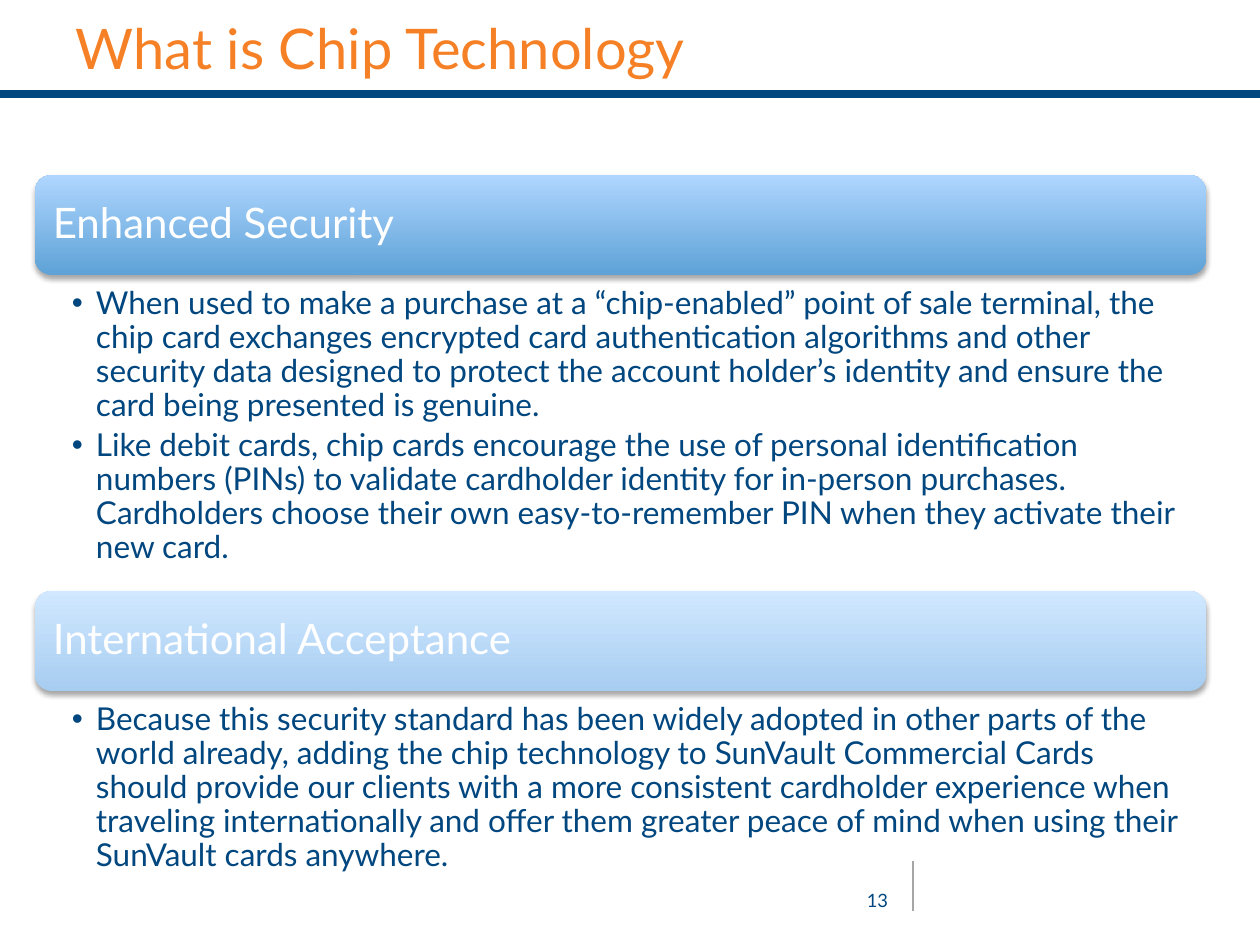
from dataclasses import dataclass

from lxml import etree
from pptx import Presentation
from pptx.dml.color import RGBColor
from pptx.enum.shapes import MSO_CONNECTOR, MSO_SHAPE
from pptx.enum.text import MSO_ANCHOR, PP_ALIGN
from pptx.oxml.ns import qn
from pptx.util import Pt

STRAIGHT = MSO_CONNECTOR.STRAIGHT
ROUNDED = MSO_SHAPE.ROUNDED_RECTANGLE
TOP, MIDDLE = MSO_ANCHOR.TOP, MSO_ANCHOR.MIDDLE
LEFT, RIGHT = PP_ALIGN.LEFT, PP_ALIGN.RIGHT

TITLE = "What is Chip Technology"
PAGE_NUMBER = "13"
SECTIONS = [
    {
        "heading": "Enhanced Security",
        "gradient": ("5EA2D7", "AFD6FF"),
        "body_height": 278,
        "points": [
            "When used to make a purchase at a “chip-enabled” point of sale terminal, "
            "the chip card exchanges encrypted card authentication algorithms and other "
            "security data designed to protect the account holder’s identity and ensure "
            "the card being presented is genuine.",
            "Like debit cards, chip cards encourage the use of personal identification "
            "numbers (PINs) to validate cardholder identity for in-person purchases. "
            "Cardholders choose their own easy-to-remember PIN when they activate their "
            "new card.",
        ],
    },
    {
        "heading": "International Acceptance",
        "gradient": ("A7CDF1", "D1E8FF"),
        "body_height": 171,
        "points": [
            "Because this security standard has been widely adopted in other parts of the "
            "world already, adding the chip technology to SunVault Commercial Cards "
            "should provide our clients with a more consistent cardholder experience when "
            "traveling internationally and offer them greater peace of mind when using "
            "their SunVault cards anywhere.",
        ],
    },
]


@dataclass(frozen=True)
class Theme:
    font: str = "Lato"
    navy: str = "00467F"
    orange: str = "F58025"
    white: str = "FFFFFF"
    grey: str = "A6A6A6"
    shadow: str = "000000"
    title_size: float = 32
    heading_size: float = 24
    body_size: float = 18
    number_size: float = 10.5


THEME = Theme()
SLIDE_W, SLIDE_H = 1260, 945
SECTION_X, SECTION_W, FIRST_SECTION_Y = 35, 1171, 175
BAR_H, BODY_GAP, SECTION_GAP = 100, 8, 30
BULLET_INDENT = 24


def px(length):
    return round(length * 914400 / 126)


def rgb(value):
    return RGBColor.from_string(value)


def write(shape, paragraphs, *, size, color, align=LEFT, anchor=TOP,
          insets=(13, 6, 13, 6), wrap=True, spacing=None, after=0, bullet=None):
    frame = shape.text_frame
    frame.word_wrap = wrap
    frame.vertical_anchor = anchor
    (frame.margin_left, frame.margin_top,
     frame.margin_right, frame.margin_bottom) = map(px, insets)
    for index, text in enumerate(paragraphs):
        paragraph = frame.paragraphs[0] if index == 0 else frame.add_paragraph()
        paragraph.text = text
        paragraph.alignment = align
        paragraph.space_after = Pt(after)
        if spacing:
            paragraph.line_spacing = spacing
        if bullet:
            properties = paragraph._p.get_or_add_pPr()
            properties.set("marL", str(px(BULLET_INDENT)))
            properties.set("indent", str(-px(BULLET_INDENT)))
            etree.SubElement(properties, qn("a:buFont"), typeface="Arial")
            etree.SubElement(properties, qn("a:buChar"), char=bullet)
        font = paragraph.font
        font.name, font.size = THEME.font, Pt(size)
        font.color.rgb = rgb(color)


def add_text(slide, box, paragraphs, **style):
    write(slide.shapes.add_textbox(*map(px, box)), paragraphs, **style)


def add_rule(slide, ends, color, width):
    rule = slide.shapes.add_connector(STRAIGHT, *map(px, ends))
    rule.line.color.rgb = rgb(color)
    rule.line.width = Pt(width)
    etree.SubElement(rule._element.spPr, qn("a:effectLst"))


def add_shadow(shape):
    effects = etree.SubElement(shape._element.spPr, qn("a:effectLst"))
    shadow = etree.SubElement(
        effects, qn("a:outerShdw"), blurRad=str(Pt(3.1)), dist=str(Pt(1.8)),
        dir="5400000", rotWithShape="0")
    color = etree.SubElement(shadow, qn("a:srgbClr"), val=THEME.shadow)
    etree.SubElement(color, qn("a:alpha"), val="35000")


def add_section(slide, top, section):
    bar = slide.shapes.add_shape(
        ROUNDED, *map(px, (SECTION_X, top, SECTION_W, BAR_H)))
    bar.fill.gradient()
    bar.fill.gradient_angle = 90
    for stop, color in zip(bar.fill.gradient_stops, section["gradient"]):
        stop.color.rgb = rgb(color)
    bar.line.fill.background()
    add_shadow(bar)
    write(bar, [section["heading"]], size=THEME.heading_size, color=THEME.white,
          anchor=MIDDLE, insets=(13, 13, 13, 13), spacing=0.9)

    body_top = top + BAR_H + BODY_GAP
    add_text(slide, (SECTION_X, body_top, SECTION_W, section["body_height"]),
             section["points"], size=THEME.body_size, color=THEME.navy,
             insets=(37, 4, 18, 4), spacing=0.9, after=3.6, bullet="•")
    return body_top + section["body_height"] + SECTION_GAP


def main():
    deck = Presentation()
    deck.slide_width, deck.slide_height = px(SLIDE_W), px(SLIDE_H)
    slide = deck.slides.add_slide(deck.slide_layouts[6])

    add_rule(slide, (0, 94, SLIDE_W, 94), THEME.navy, 4.5)
    add_rule(slide, (913, 861, 913, 911), THEME.grey, 1.25)
    add_text(slide, (852, 883, 49, 37), [PAGE_NUMBER], size=THEME.number_size,
             color=THEME.navy, align=RIGHT, wrap=False)

    top = FIRST_SECTION_Y
    for section in SECTIONS:
        top = add_section(slide, top, section)

    add_text(slide, (63, 0, 1134, 94), [TITLE], size=THEME.title_size,
             color=THEME.orange, anchor=MIDDLE)
    deck.save("out.pptx")


if __name__ == "__main__":
    main()
